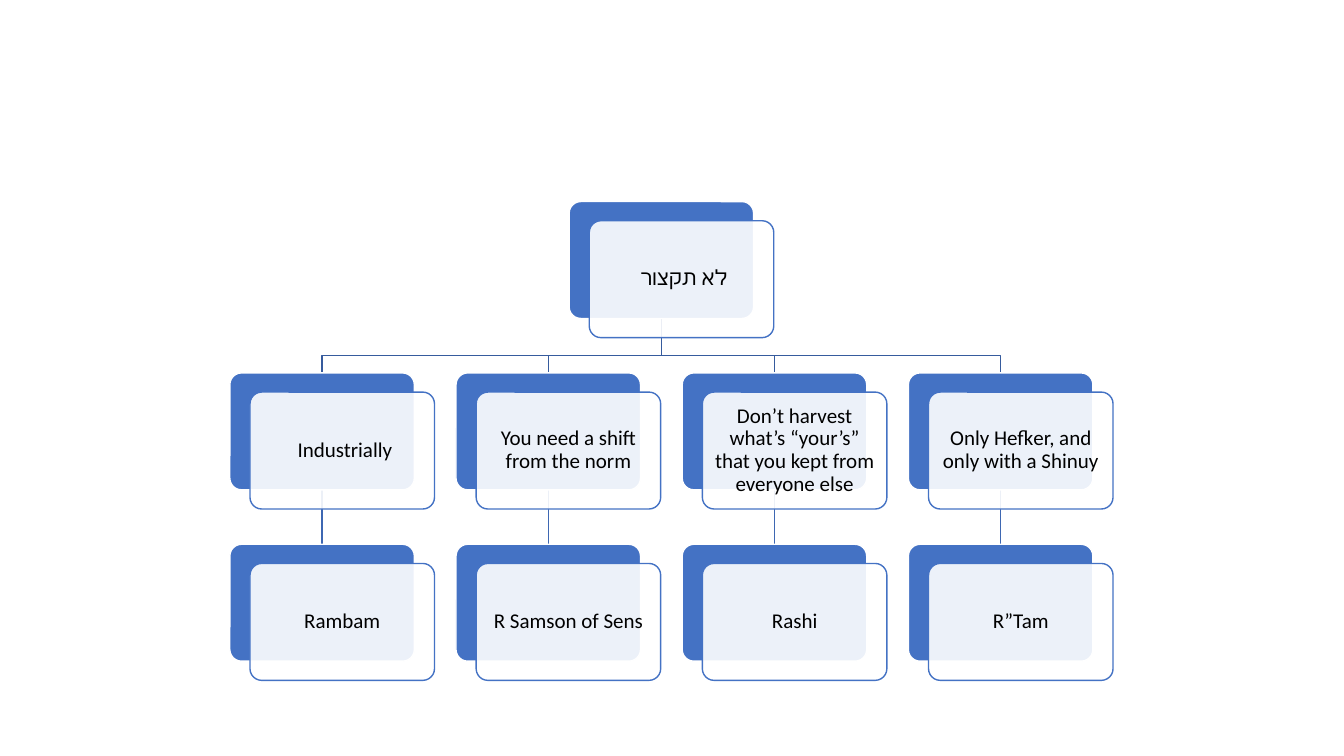
from lxml.etree import SubElement
from pptx import Presentation
from pptx.dml.color import RGBColor
from pptx.enum.shapes import MSO_CONNECTOR, MSO_SHAPE
from pptx.enum.text import MSO_ANCHOR, PP_ALIGN
from pptx.oxml.ns import qn
from pptx.util import Inches, Pt

COLORS = {
    "blue": "4472C4",
    "white": "FFFFFF",
    "black": "000000",
    "branch": "365B9D",
    "stem": "3E67B2",
}
ROOT = "לא תקצור "
OPINIONS = [
    ("Industrially ", "Rambam"),
    ("You need a shift from the norm", "R Samson of Sens"),
    ("Don’t harvest what’s “your’s” that you kept from everyone else", "Rashi"),
    ("Only Hefker, and only with a Shinuy", "R”Tam"),
]
CARD_W, CARD_H = 1.83, 1.16
OFFSET_X, OFFSET_Y = 0.2, 0.19
LEVEL_STEP = 1.7


def rgb(name):
    return RGBColor.from_string(COLORS[name])


def add_text(sp, text, size=15, font="Calibri", color="black", inset=0.06):
    tf = sp.text_frame
    tf.word_wrap = True
    tf.vertical_anchor = MSO_ANCHOR.MIDDLE
    tf.margin_left = tf.margin_right = Inches(inset)
    tf.margin_top = tf.margin_bottom = Inches(inset)
    p = tf.paragraphs[0]
    p.alignment = PP_ALIGN.CENTER
    p.line_spacing = 0.9
    p.space_after = Pt(size * 0.35)
    p._p.get_or_add_pPr().set("rtl", "1")
    r = p.add_run()
    r.text = text
    r.font.size = Pt(size)
    r.font.name = font
    r.font.color.rgb = rgb(color)


def add_panel(s, x, y, fill, line, opacity=100):
    sp = s.shapes.add_shape(MSO_SHAPE.ROUNDED_RECTANGLE, Inches(x), Inches(y),
                            Inches(CARD_W), Inches(CARD_H))
    sp.adjustments[0] = 0.1
    sp.shadow.inherit = False
    sp.fill.solid()
    sp.fill.fore_color.rgb = rgb(fill)
    sp.line.color.rgb = rgb(line)
    sp.line.width = Pt(1)
    if opacity < 100:
        clr = sp._element.spPr.find(qn("a:solidFill"))[0]
        SubElement(clr, qn("a:alpha")).set("val", str(opacity * 1000))
    return sp


def add_card(s, x, y, text):
    add_panel(s, x, y, "blue", "white")
    front = add_panel(s, x + OFFSET_X, y + OFFSET_Y, "white", "blue", opacity=90)
    add_text(front, text)


def add_branch(s, x1, y1, x2, y2):
    bend = y2 - 0.17
    fb = s.shapes.build_freeform(Inches(x1), Inches(y1))
    fb.add_line_segments([(Inches(x), Inches(y)) for x, y in
                          ((x1, bend), (x2, bend), (x2, y2))], close=False)
    sp = fb.convert_to_shape()
    sp.shadow.inherit = False
    sp.fill.background()
    sp.line.color.rgb = rgb("branch")
    sp.line.width = Pt(1)


def add_stem(s, x, y1, y2):
    c = s.shapes.add_connector(MSO_CONNECTOR.STRAIGHT, Inches(x), Inches(y1),
                               Inches(x), Inches(y2))
    c.line.color.rgb = rgb("stem")
    c.line.width = Pt(1)
    SubElement(c._element.spPr, qn("a:effectLst"))


def add_hierarchy(s, left, top, width):
    step = (width - OFFSET_X - CARD_W) / (len(OPINIONS) - 1)
    columns = [left + i * step for i in range(len(OPINIONS))]
    root_x = (columns[0] + columns[-1]) / 2
    opinion_y, author_y = top + LEVEL_STEP, top + 2 * LEVEL_STEP
    half = CARD_W / 2
    for x in columns:
        add_stem(s, x + half, opinion_y + CARD_H, author_y)
        add_branch(s, root_x + half, top + CARD_H, x + half, opinion_y)
    add_card(s, root_x, top, ROOT)
    for x, (opinion, author) in zip(columns, OPINIONS):
        add_card(s, x, opinion_y, opinion)
        add_card(s, x, author_y, author)


def main():
    prs = Presentation()
    prs.slide_width, prs.slide_height = Inches(13.33), Inches(7.5)
    s = prs.slides.add_slide(prs.slide_layouts[6])
    add_hierarchy(s, left=2.28, top=2, width=8.76)
    prs.save("out.pptx")


if __name__ == "__main__":
    main()
